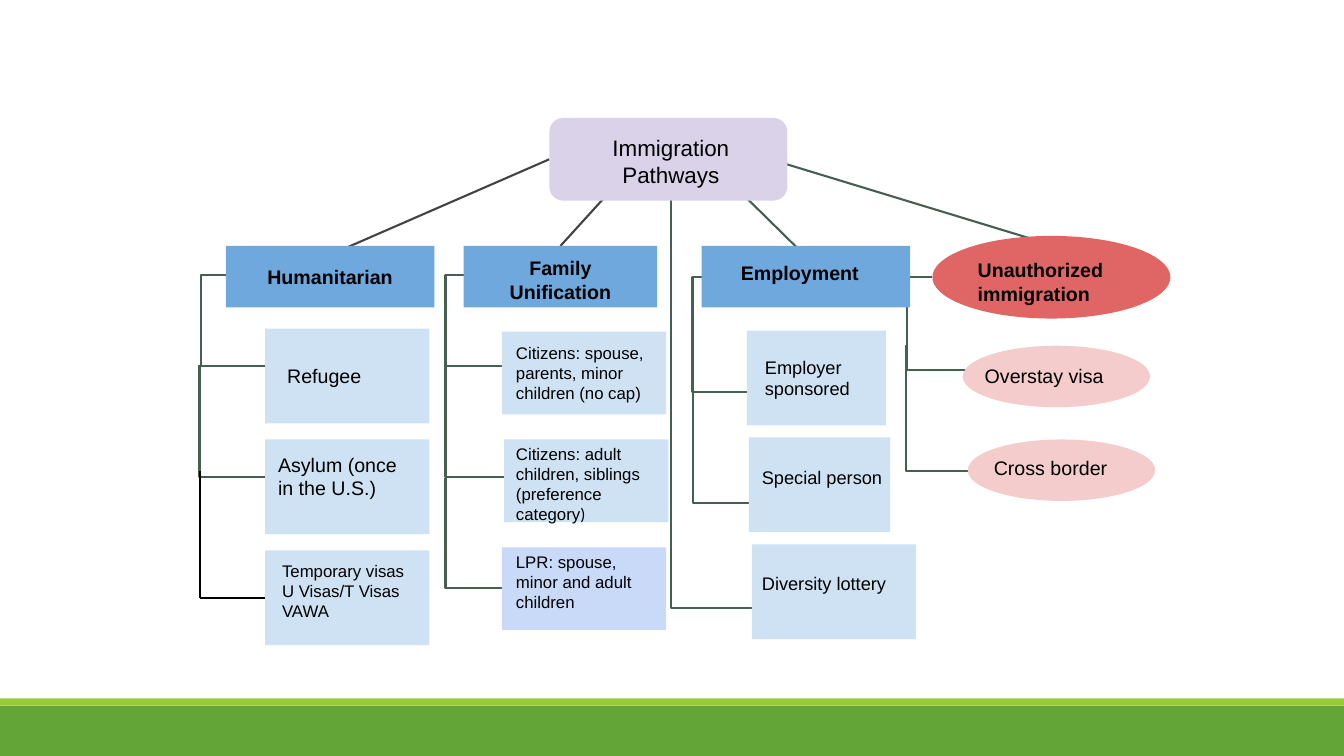
from lxml import etree
from pptx import Presentation
from pptx.dml.color import RGBColor as RGB
from pptx.enum.shapes import MSO_CONNECTOR as CONN, MSO_SHAPE as SHAPE
from pptx.enum.text import PP_ALIGN as ALIGN
from pptx.oxml.ns import qn
from pptx.util import Inches, Pt

COLORS = {
    "grass": "63A537", "lime": "99CB38", "title": "D9D2E9", "head": "6FA8DC",
    "card": "CFE2F3", "lilac": "C9DAF8", "red": "E06666", "pink": "F4CCCC",
    "green": "455F51", "gray": "434343", "black": "000000",
}
COLS, ROWS = 133.33, 75  # grid cells of a tenth of an inch


class Chart:
    def __init__(self, prs):
        self.s = prs.slides.add_slide(prs.slide_layouts[6])
        self.cell_w = prs.slide_width / COLS
        self.cell_h = prs.slide_height / ROWS
        self.lines = 0

    def box(self, x, y, w, h):
        return [round(v * c) for v, c in
                zip((x, y, w, h), (self.cell_w, self.cell_h) * 2)]

    def shape(self, fill, x, y, w, h, kind=SHAPE.RECTANGLE):
        sp = self.s.shapes.add_shape(kind, *self.box(x, y, w, h))
        sp.shadow.inherit = False
        sp.fill.solid()
        sp.fill.fore_color.rgb = RGB.from_string(COLORS[fill])
        sp.line.fill.background()
        return sp

    def label(self, text, x, y, w, h, size=14, bold=False, align=ALIGN.LEFT):
        tf = self.s.shapes.add_textbox(*self.box(x, y, w, h)).text_frame
        tf.word_wrap = True
        for side in ("left", "top", "right", "bottom"):
            setattr(tf, f"margin_{side}", Inches(0.1))
        for i, line in enumerate(text.split("\n")):
            p = tf.paragraphs[0] if i == 0 else tf.add_paragraph()
            p.alignment = align
            self.run(p, line, size=Pt(size), bold=bold)
        return tf

    def run(self, p, text, **style):
        r = p.add_run()
        r.text = text
        for name, value in {"name": "Arial", **style}.items():
            setattr(r.font, name, value)
        r.font.color.rgb = RGB.from_string(COLORS["black"])

    def line(self, start, end, color="green", kind=CONN.STRAIGHT):
        """Add a connector behind every box."""
        c = self.s.shapes.add_connector(kind, *self.box(*start, *end))
        c.line.width = Pt(1.5)
        c.line.color.rgb = RGB.from_string(COLORS[color])
        etree.SubElement(c._element.spPr, qn("a:effectLst"))
        self.s.shapes._spTree.insert(2 + self.lines, c._element)
        self.lines += 1
        return c

    def corner(self, start, end):
        """Run down from start, then right to end."""
        c = self.line(end, start, kind=CONN.ELBOW)
        c._element.spPr.find(qn("a:prstGeom")).set("prst", "bentConnector2")

    def bracket(self, start, end, reach=2.5):
        """Run left from start by reach, down, then right to end."""
        c = self.line(start, end, kind=CONN.ELBOW)
        geom = c._element.spPr.find(qn("a:prstGeom"))
        guides = geom.find(qn("a:avLst"))
        if guides is None:
            guides = etree.SubElement(geom, qn("a:avLst"))
        share = round(-reach / (end[0] - start[0]) * 100000)
        etree.SubElement(guides, qn("a:gd"), name="adj1", fmla=f"val {share}")


def main():
    prs = Presentation()
    prs.slide_width, prs.slide_height = Inches(13.33), Inches(7.5)
    d = Chart(prs)

    # Footer bands
    d.shape("grass", 0, 70, COLS, 5)
    d.shape("lime", 0, 69.3, COLS, 0.7)

    # Root and branch heads
    root = d.shape("title", 54.5, 11.7, 23.6, 8.2, SHAPE.ROUNDED_RECTANGLE)
    heads = [d.shape("head", x, 24.4, w, 6.1)
             for x, w in ((22.4, 20.7), (46, 19.2), (69.6, 20.7))]
    d.shape("red", 92.5, 23.4, 23.6, 8.2, SHAPE.OVAL)

    # Cards under each branch
    humanitarian = [d.shape("card", 26.3, 32.6 + 11 * i, 16.3, 9.4)
                    for i in range(3)]
    for fill, x, y in (("card", 49.8, 32.9), ("card", 50, 43.6),
                       ("lilac", 49.8, 54.3)):
        d.shape(fill, x, y, 16.3, 8.2)
    for x, y, w in ((74.1, 32.8, 13.8), (74.3, 43.4, 14), (74.6, 54, 16.3)):
        d.shape("card", x, y, w, 9.4)
    for x, y in ((95.5, 34.3), (96, 43.6)):
        d.shape("pink", x, y, 18.6, 6.1, SHAPE.OVAL)

    # Lines from the root
    d.line((54.5, 15.8), (32.7, 25.3), "gray").begin_connect(root, 1)
    d.line((66.6, 12.3), (55.6, 24.4), "gray").end_connect(heads[1], 0)
    d.line((66.6, 12.3), (79.4, 24.9))
    d.line((77.4, 16.1), (105.3, 24.6))

    # Lines from the heads to their cards
    for start, end in (((22.4, 27.3), (26.3, 36.3)),
                       ((46.7, 27.3), (50.7, 36.3)),
                       ((71.2, 27.5), (74.9, 38.9)),
                       ((92.5, 27.5), (103, 36.7))):
        d.bracket(start, end)
    for start, end in (((19.8, 36.2), (26.3, 47.3)),
                       ((44.2, 36.2), (50.7, 47.3)),
                       ((44.2, 47.4), (50.7, 58.3)),
                       ((66.6, 19.8), (74.6, 60.3)),
                       ((68.8, 38.3), (74.8, 49.9)),
                       ((89.9, 34.2), (96, 46.7))):
        d.corner(start, end)
    d.line((26.3, 59.3), (19.8, 59.3), "black").begin_connect(
        humanitarian[2], 1)
    d.line((19.8, 59.3), (19.8, 46.7), "black")

    # Root and head labels
    mid = ALIGN.CENTER
    d.label("Immigration Pathways", 55.7, 12.3, 21.7, 7.5, 16, align=mid)
    d.label("Humanitarian", 22.4, 25.3, 20.7, 6.1, 14, True, mid)
    d.label("Family Unification", 46.3, 24.4, 18.6, 5.3, 14, True, mid)
    d.label("Employment", 71.2, 24.9, 16.3, 5.3, 14, True, mid)
    d.label("Unauthorized immigration", 96, 24.6, 18.6, 7.5, 14, True)

    # Card labels
    for text, x, y, w, h, size in (
            ("Refugee", 27.5, 35.1, 16.3, 7.5, 14),
            ("Asylum (once in the U.S.)", 26.6, 43.9, 15.5, 9.1, 14),
            ("Temporary visas\nU Visas/T Visas\nVAWA", 27, 54.6, 15, 9.4, 12),
            ("LPR: spouse, minor and adult children",
             50.2, 53.7, 15.5, 9.1, 12),
            ("Employer sponsored", 74.9, 34.3, 16.3, 9.1, 13),
            ("Special person", 74.6, 45.3, 18.6, 9.1, 13),
            ("Diversity lottery", 74.6, 55.8, 18.6, 9.1, 13),
            ("Overstay visa", 96.7, 35.1, 18.6, 9.1, 14),
            ("Cross border", 97.6, 44.2, 18.6, 9.1, 14)):
        d.label(text, x, y, w, h, size)
    citizens = d.label("Citizens: spouse, parents, minor children (no cap)\n"
                       "Citizens: adult children, siblings "
                       "(preference category", 50.2, 33, 15, 12.1, 12)
    siblings = citizens.paragraphs[1]
    siblings.space_before = Pt(28.8)
    d.run(siblings, ")", name="Calibri", size=Pt(12))

    prs.save("out.pptx")


if __name__ == "__main__":
    main()
